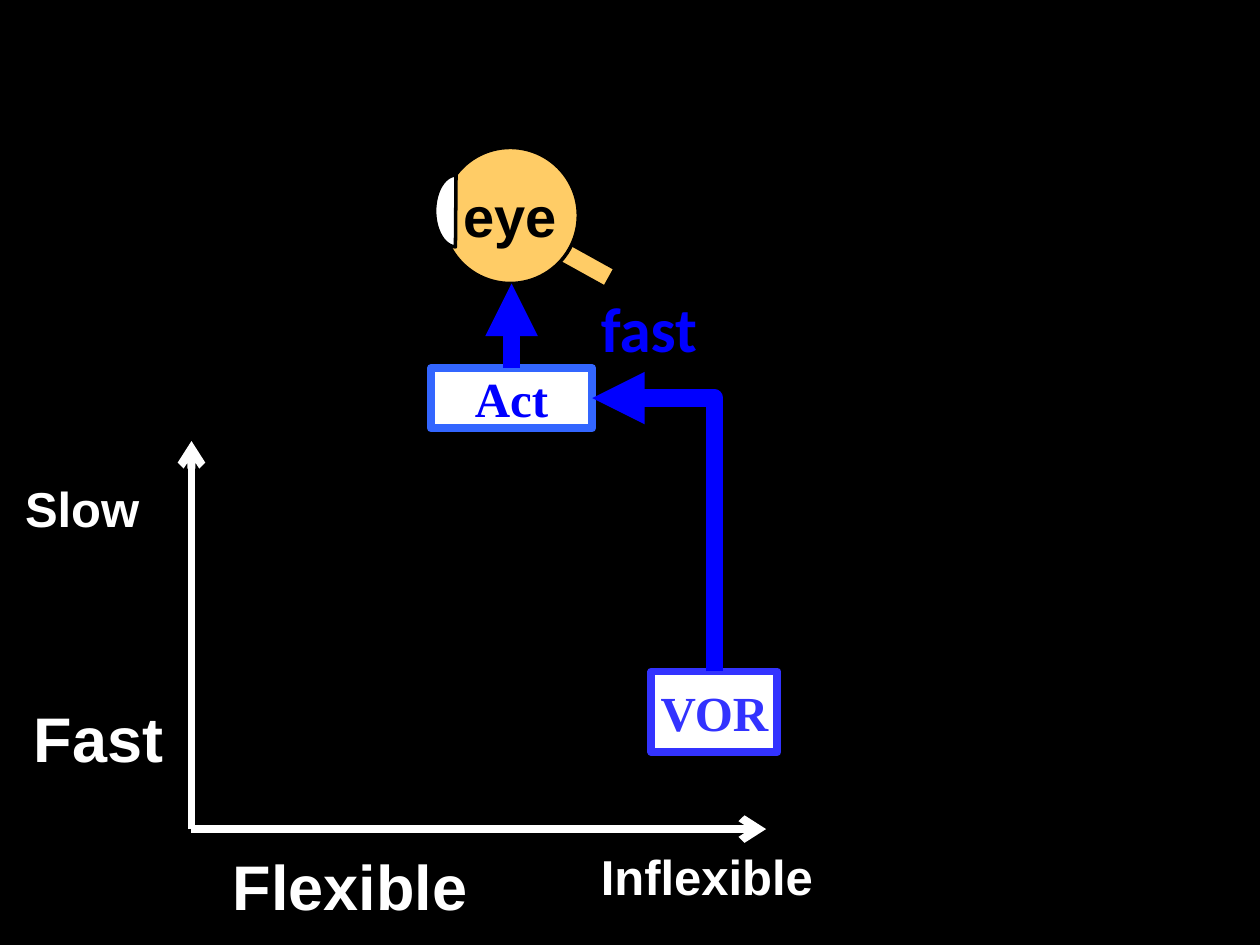
from lxml.etree import SubElement
from pptx import Presentation
from pptx.dml.color import RGBColor
from pptx.enum.shapes import MSO_CONNECTOR, MSO_SHAPE
from pptx.enum.text import MSO_ANCHOR, MSO_AUTO_SIZE, PP_ALIGN
from pptx.oxml.ns import qn
from pptx.util import Inches, Pt

BLACK = RGBColor(0x00, 0x00, 0x00)
WHITE = RGBColor(0xFF, 0xFF, 0xFF)
BLUE = RGBColor(0x00, 0x00, 0xFF)
ACT_EDGE = RGBColor(0x33, 0x66, 0xFF)
VOR_BLUE = RGBColor(0x33, 0x33, 0xFF)
SKIN = RGBColor(0xFF, 0xCC, 0x66)


def add_run(tf, text, size, font, color):
    """Write one bold run into the first paragraph."""
    tf.word_wrap = False
    r = tf.paragraphs[0].add_run()
    r.text = text
    r.font.size = Pt(size)
    r.font.name = font
    r.font.bold = True
    r.font.color.rgb = color


def add_label(s, left, top, width, height, text, size, color=WHITE, font="Arial"):
    """Place a free-standing label that does not wrap."""
    tb = s.shapes.add_textbox(Inches(left), Inches(top), Inches(width), Inches(height))
    add_run(tb.text_frame, text, size, font, color)
    tb.text_frame.auto_size = MSO_AUTO_SIZE.SHAPE_TO_FIT_TEXT


def add_filled(shapes, kind, left, top, width, height, fill, edge, weight):
    """Place a flat preset shape with a fill and an outline."""
    sp = shapes.add_shape(kind, Inches(left), Inches(top), Inches(width), Inches(height))
    sp.shadow.inherit = False
    sp.fill.solid()
    sp.fill.fore_color.rgb = fill
    sp.line.color.rgb = edge
    sp.line.width = Pt(weight)
    return sp


def center_text(sp, text, size, font, color):
    """Write centred text into a shape."""
    tf = sp.text_frame
    tf.vertical_anchor = MSO_ANCHOR.MIDDLE
    tf.paragraphs[0].alignment = PP_ALIGN.CENTER
    add_run(tf, text, size, font, color)


def add_arrow(s, kind, x1, y1, x2, y2, color, weight, head):
    """Draw a connector with an arrowhead at its end."""
    cx = s.shapes.add_connector(kind, Inches(x1), Inches(y1), Inches(x2), Inches(y2))
    cx.line.color.rgb = color
    cx.line.width = Pt(weight)
    SubElement(cx.line._get_or_add_ln(), qn("a:tailEnd"), type=head)
    SubElement(cx._element.spPr, qn("a:effectLst"))
    return cx


def add_axes(s, left, top, width, height):
    """Draw the two axes from their shared origin, with the end labels."""
    base = top + height
    for x, y in ((left, top), (left + width, base)):
        add_arrow(s, MSO_CONNECTOR.STRAIGHT, left, base, x, y, WHITE, 4.5, "arrow")
    add_label(s, left - 1.42, top + 0.25, 1.12, 0.57, "Slow", 28)
    add_label(s, left - 1.35, top + 2, 1.24, 0.71, "Fast", 36)
    add_label(s, left + 0.23, base + 0.1, 2.08, 0.71, "Flexible", 36)
    add_label(s, left + 3.15, base + 0.09, 1.91, 0.57, "Inflexible", 28)


def add_eye(s, left, top, size):
    """Draw the eye as a group of nerve, ball and cornea."""
    shapes = s.shapes.add_group_shape().shapes
    nerve = add_filled(shapes, MSO_SHAPE.RECTANGLE, left + 0.9, top + 0.84,
                       0.46, 0.17, SKIN, BLACK, 2)
    nerve.rotation = 29
    ball = add_filled(shapes, MSO_SHAPE.OVAL, left, top, size, size, SKIN, BLACK, 2)
    center_text(ball, "eye", 32, "Arial", BLACK)
    cornea = add_filled(shapes, MSO_SHAPE.CHORD, left - 0.06, top + 0.22,
                        0.34, 0.57, WHITE, BLACK, 2)
    cornea.adjustments[0] = 54.59
    cornea.adjustments[1] = 162


def add_box(s, left, top, width, height, text, color, edge):
    """Place a framed white stage box."""
    sp = add_filled(s.shapes, MSO_SHAPE.RECTANGLE, left, top, width, height,
                    WHITE, edge, 4.5)
    center_text(sp, text, 28, "Times New Roman", color)
    return sp


def add_corner_arrow(s, source, target):
    """Lead up from the top of source, then left into the side of target."""
    cx = add_arrow(s, MSO_CONNECTOR.ELBOW, 0, 0, 1, 1, BLUE, 10, "triangle")
    cx.begin_connect(source, 0)
    cx.end_connect(target, 3)
    x1, y1 = source.left + source.width // 2, source.top
    x2, y2 = target.left + target.width, target.top + target.height // 2
    cx.width, cx.height = y1 - y2, x1 - x2
    cx.left = (x1 + x2 - cx.width) // 2
    cx.top = (y1 + y2 - cx.height) // 2
    xfrm = cx._element.spPr.find(qn("a:xfrm"))
    xfrm.set("rot", str(270 * 60000))
    xfrm.set("flipH", "0")
    xfrm.set("flipV", "1")
    cx._element.spPr.find(qn("a:prstGeom")).set("prst", "bentConnector2")


def add_reflex(s):
    """Draw the path from VOR through Act to the eye."""
    add_eye(s, 3.51, 1.17, 1.08)
    act = add_box(s, 3.42, 2.92, 1.28, 0.48, "Act", BLUE, ACT_EDGE)
    up = add_arrow(s, MSO_CONNECTOR.STRAIGHT, 4.06, 2.92, 4.06, 2.25, BLUE, 10, "triangle")
    up.begin_connect(act, 0)
    vor = add_box(s, 5.17, 5.33, 1, 0.64, "VOR", VOR_BLUE, VOR_BLUE)
    add_corner_arrow(s, vor, act)
    add_label(s, 4.67, 2.25, 0.97, 0.71, "fast", 36, BLUE, "Calibri")


def main():
    """Build and save the slide."""
    prs = Presentation()
    prs.slide_width, prs.slide_height = Inches(10), Inches(7.5)
    s = prs.slides.add_slide(prs.slide_layouts[6])
    s.background.fill.solid()
    s.background.fill.fore_color.rgb = BLACK
    add_axes(s, 1.52, 3.5, 4.56, 3.08)
    add_reflex(s)
    prs.save("out.pptx")


if __name__ == "__main__":
    main()
